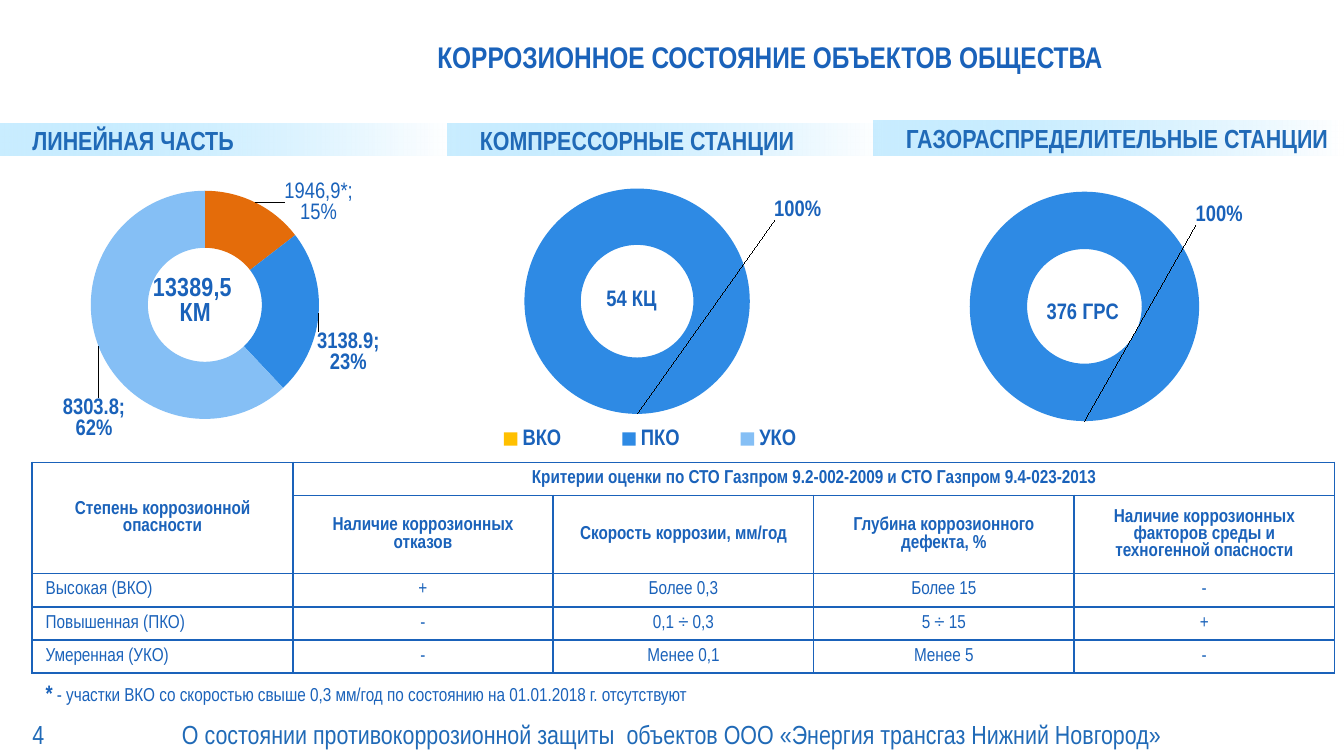
from lxml import etree
from pptx import Presentation, util as u
from pptx.chart.data import CategoryChartData
from pptx.dml.color import RGBColor
from pptx.enum import chart as ch, shapes, text
from pptx.oxml import parse_xml
from pptx.oxml.ns import nsdecls, qn

FONT = "Arial Narrow"
BLUE, SOFT_BLUE = "1A62BA", "206AB7"
CENTER, LEFT = text.PP_ALIGN.CENTER, text.PP_ALIGN.LEFT


def color(value):
    return RGBColor.from_string(value)


def add_run(paragraph, words, size, bold=False, ink=BLUE):
    run = paragraph.add_run()
    run.text = words
    run.font.name = FONT
    run.font.size = u.Pt(size)
    run.font.bold = bold
    run.font.color.rgb = color(ink)


presentation = Presentation()
presentation.slide_width, presentation.slide_height = u.Inches(10), u.Inches(10 * 9 / 16)
slide = presentation.slides.add_slide(presentation.slide_layouts[5])

title = slide.shapes.title
title.left, title.top = u.Inches(1.46), u.Inches(0.01)
title.width, title.height = u.Inches(8.54), u.Inches(0.83)
title.text_frame.vertical_anchor = text.MSO_ANCHOR.MIDDLE
paragraph = title.text_frame.paragraphs[0]
paragraph.alignment = CENTER
add_run(paragraph, "КОРРОЗИОННОЕ СОСТОЯНИЕ ОБЪЕКТОВ ОБЩЕСТВА", 16, True)

footer = "О состоянии противокоррозионной защиты  объектов ООО «Энергия трансгаз Нижний Новгород»"
note = " - участки ВКО со скоростью свыше 0,3 мм/год по состоянию на 01.01.2018 г. отсутствуют"
for left, top, width, margin, align, runs in [
    (0.24, 5.31, 1.75, 0, LEFT, [("4", 14, False, SOFT_BLUE)]),
    (0, 5.31, 10, 0.1, CENTER, [(footer, 14, False, SOFT_BLUE)]),
    (0.24, 5, 5.91, 0.1, LEFT, [("*", 12, True), (note, 10)]),
]:
    box = slide.shapes.add_textbox(u.Inches(left), u.Inches(top), u.Inches(width), u.Inches(0.3))
    frame = box.text_frame
    frame.word_wrap = True
    frame.vertical_anchor = text.MSO_ANCHOR.MIDDLE
    frame.margin_left = frame.margin_right = u.Inches(margin)
    frame.paragraphs[0].alignment = align
    for run in runs:
        add_run(frame.paragraphs[0], *run)

for left, top, width, height, heading in [
    (0, 0.92, 3.35, 0.24, "ЛИНЕЙНАЯ ЧАСТЬ"),
    (3.33, 0.92, 3.23, 0.24, "КОМПРЕССОРНЫЕ СТАНЦИИ"),
    (6.5, 0.9, 3.5, 0.26, "ГАЗОРАСПРЕДЕЛИТЕЛЬНЫЕ СТАНЦИИ"),
]:
    band = slide.shapes.add_shape(shapes.MSO_SHAPE.RECTANGLE, u.Inches(left), u.Inches(top),
                                  u.Inches(width), u.Inches(height))
    band.shadow.inherit = False
    band.line.fill.background()
    band.fill.gradient()
    band.fill.gradient_angle = 0
    for stop, position, ink in zip(band.fill.gradient_stops, (0, 1), ("66CCFF", "FFFFFF")):
        stop.position = position
        stop.color.rgb = color(ink)
    for tint, alpha in zip(band.fill._xPr.iter(qn("a:srgbClr")), (35000, 82000)):
        etree.SubElement(tint, qn("a:alpha")).set("val", str(alpha))
    frame = band.text_frame
    frame.word_wrap = True
    frame.vertical_anchor = text.MSO_ANCHOR.MIDDLE
    frame.margin_left = u.Inches(0.24)
    frame.margin_right = frame.margin_top = frame.margin_bottom = 0
    frame.paragraphs[0].alignment = LEFT
    add_run(frame.paragraphs[0], heading, 14, True, SOFT_BLUE)

rows = [
    ["Степень коррозионной опасности",
     "Критерии оценки по СТО Газпром 9.2-002-2009 и СТО Газпром 9.4-023-2013", "", "", ""],
    ["", "Наличие коррозионных отказов", "Скорость коррозии, мм/год",
     "Глубина коррозионного дефекта, %",
     "Наличие коррозионных факторов среды и техногенной опасности"],
    ["Высокая (ВКО)", "+", "Более 0,3", "Более 15", "-"],
    ["Повышенная (ПКО)", "-", "0,1 ÷ 0,3", "5 ÷ 15", "+"],
    ["Умеренная (УКО)", "-", "Менее 0,1", "Менее 5", "-"],
]
table = slide.shapes.add_table(5, 5, u.Inches(0.24), u.Inches(3.44),
                               u.Inches(9.69), u.Inches(1.38)).table
table.first_row = table.horz_banding = False
for column in table.columns:
    column.width = u.Inches(9.69 / 5)
for row, height in zip(table.rows, (0.23, 0.46, 0.23, 0.23, 0.23)):
    row.height = u.Inches(height)
table.cell(0, 0).merge(table.cell(1, 0))
table.cell(0, 1).merge(table.cell(0, 4))
for i, row in enumerate(rows):
    for j, words in enumerate(row):
        cell = table.cell(i, j)
        cell.vertical_anchor = text.MSO_ANCHOR.MIDDLE
        cell.margin_left = cell.margin_right = u.Inches(0.1)
        cell.margin_top = cell.margin_bottom = u.Inches(0.04)
        properties = cell._tc.get_or_add_tcPr()
        for side in ("lnL", "lnR", "lnT", "lnB"):
            properties.append(parse_xml(
                f'<a:{side} {nsdecls("a")} w="12700"><a:solidFill><a:srgbClr val="{BLUE}"/>'
                f'</a:solidFill></a:{side}>'))
        cell.fill.background()
        paragraph = cell.text_frame.paragraphs[0]
        paragraph.alignment = text.PP_ALIGN.JUSTIFY if i > 1 and j == 0 else CENTER
        if words:
            add_run(paragraph, words, 10, i < 2)

LAYOUT = "<c:layout><c:manualLayout>{}</c:manualLayout></c:layout>"
numbers, degrees = ["1", "2", "3"], ["ВКО", "ПКО", "УКО"]
single = {1: (0.37, -0.56, "")}
for at, name, lines, size, spot, plot_box, categories, values, inks, labels, show_value in [
    ((0.01, 1.16, 3.33, 2.36), "Series 1", ["13389,5 ", "КМ"], 14, (0.33, 0.36),
     (0.2, 0.07, 0.51, 0.8), numbers, (1946.9, 3138.9, 8303.8), ("E46C0A", "2E8AE4", "85BFF5"),
     {0: (0.17, -0.08, "1946,9*; 15%"), 1: (0.13, 0.13, ""), 2: (-0.07, 0.26, "")}, 1),
    ((3.19, 1.17, 3.23, 2.33), "54 КЦ", ["54 КЦ"], 12, (0.4, 0.4),
     (0.22, 0.1, 0.52, 0.72), degrees, (0, 100, 0), ("FFC000", "2E8AE4", "85BFF5"), single, 0),
    ((6.89, 1.16, 2.71, 2.36), "376 ГРС", ["376 ГРС"], 12, (0.32, 0.44),
     (0.12, 0.08, 0.63, 0.79), numbers, (0, 100, 0), ("FFC000", "2E8AE4", "85BFF5"), single, 0),
]:
    data = CategoryChartData()
    data.categories = categories
    data.add_series(name, values, number_format="0.0" if show_value else "0")
    chart = slide.shapes.add_chart(ch.XL_CHART_TYPE.DOUGHNUT, *map(u.Inches, at), data).chart
    chart.font.name, chart.font.size = FONT, u.Pt(10)
    chart.font.color.rgb = color(BLUE)
    plot = chart.plots[0]
    plot.vary_by_categories = True
    for i, ink in enumerate(inks):
        point = plot.series[0].points[i]
        point.format.fill.solid()
        point.format.fill.fore_color.rgb = color(ink)
        point.format.line.fill.background()

    frame = chart.chart_title.text_frame
    for i, words in enumerate(lines):
        paragraph = frame.add_paragraph() if i else frame.paragraphs[0]
        paragraph.alignment = CENTER
        add_run(paragraph, words, size, True)
    chart.chart_title.include_in_layout = True

    space = chart._chartSpace
    areas = [("c:title", 1, spot), ("c:plotArea", 0, plot_box)]
    chart.has_legend = categories == degrees
    if chart.has_legend:
        chart.legend.position = ch.XL_LEGEND_POSITION.BOTTOM
        chart.legend.include_in_layout = False
        chart.legend.font.name, chart.legend.font.size = FONT, u.Pt(12)
        chart.legend.font.bold = True
        chart.legend.font.color.rgb = color(BLUE)
        areas.append(("c:legend", 1, (0.05, 0.85, 0.92, 0.1)))
    for tag, index, box in areas:
        owner = next(space.iter(qn(tag)))
        for old in owner.findall(qn("c:layout")):
            owner.remove(old)
        parts = '<c:layoutTarget val="inner"/>' if tag == "c:plotArea" else ""
        parts += "".join(f'<c:{k}Mode val="edge"/>' for k in "xy")
        parts += "".join(f'<c:{k} val="{v}"/>' for k, v in zip("xywh", box))
        owner.insert(index, parse_xml(LAYOUT.format(parts).replace(
            "<c:layout>", f'<c:layout {nsdecls("c")}>', 1)))

    style = (f'sz="1200" b="{{}}"><a:solidFill><a:srgbClr val="{BLUE}"/></a:solidFill>'
             f'<a:latin typeface="{FONT}"/>')
    number_format = "" if show_value else '<c:numFmt formatCode="0%" sourceLinked="0"/>'
    text_style = (f'<c:txPr><a:bodyPr/><a:p><a:pPr><a:defRPr {style.format(1)}</a:defRPr></a:pPr>'
                  '</a:p></c:txPr>')
    shown = "".join(f'<c:show{k} val="{v}"/>' for k, v in [
        ("LegendKey", 0), ("Val", show_value), ("CatName", 0), ("SerName", 0),
        ("Percent", 1), ("BubbleSize", 0)]) + "<c:separator>; </c:separator>"
    xml = ""
    for i in range(3):
        body = '<c:delete val="1"/>'
        if i in labels:
            x, y, custom = labels[i]
            body = LAYOUT.format(f'<c:x val="{x}"/><c:y val="{y}"/>')
            if custom:
                body += (f'<c:tx><c:rich><a:bodyPr/><a:p><a:r><a:rPr {style.format(0)}</a:rPr>'
                         f'<a:t>{custom}</a:t></a:r></a:p></c:rich></c:tx>')
            body += number_format + text_style + shown
        xml += f'<c:dLbl><c:idx val="{i}"/>{body}</c:dLbl>'
    next(space.iter(qn("c:cat"))).addprevious(parse_xml(
        f'<c:dLbls {nsdecls("c", "a")}>{xml}{number_format}{text_style}{shown}'
        '<c:showLeaderLines val="1"/></c:dLbls>'))

presentation.save("out.pptx")
